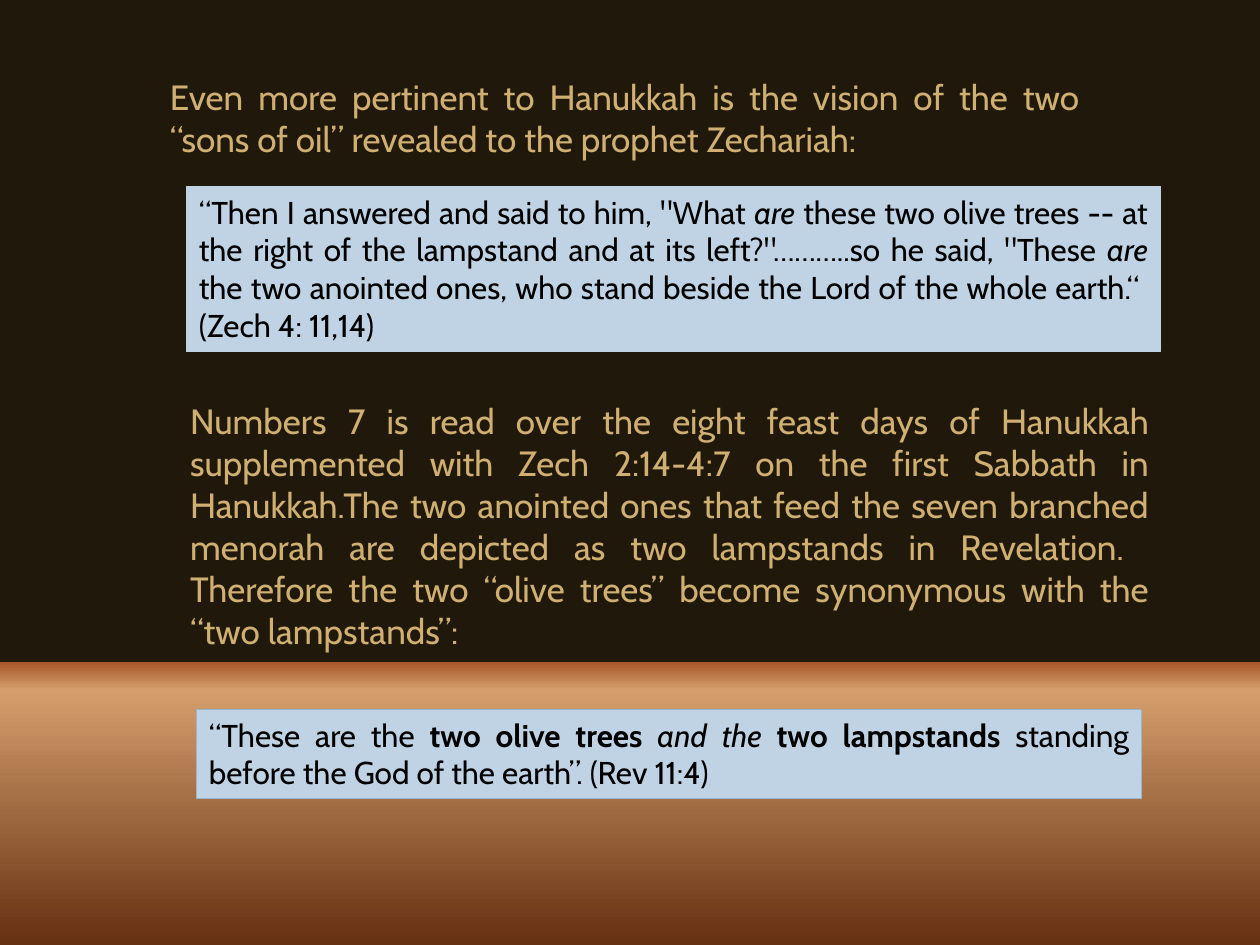
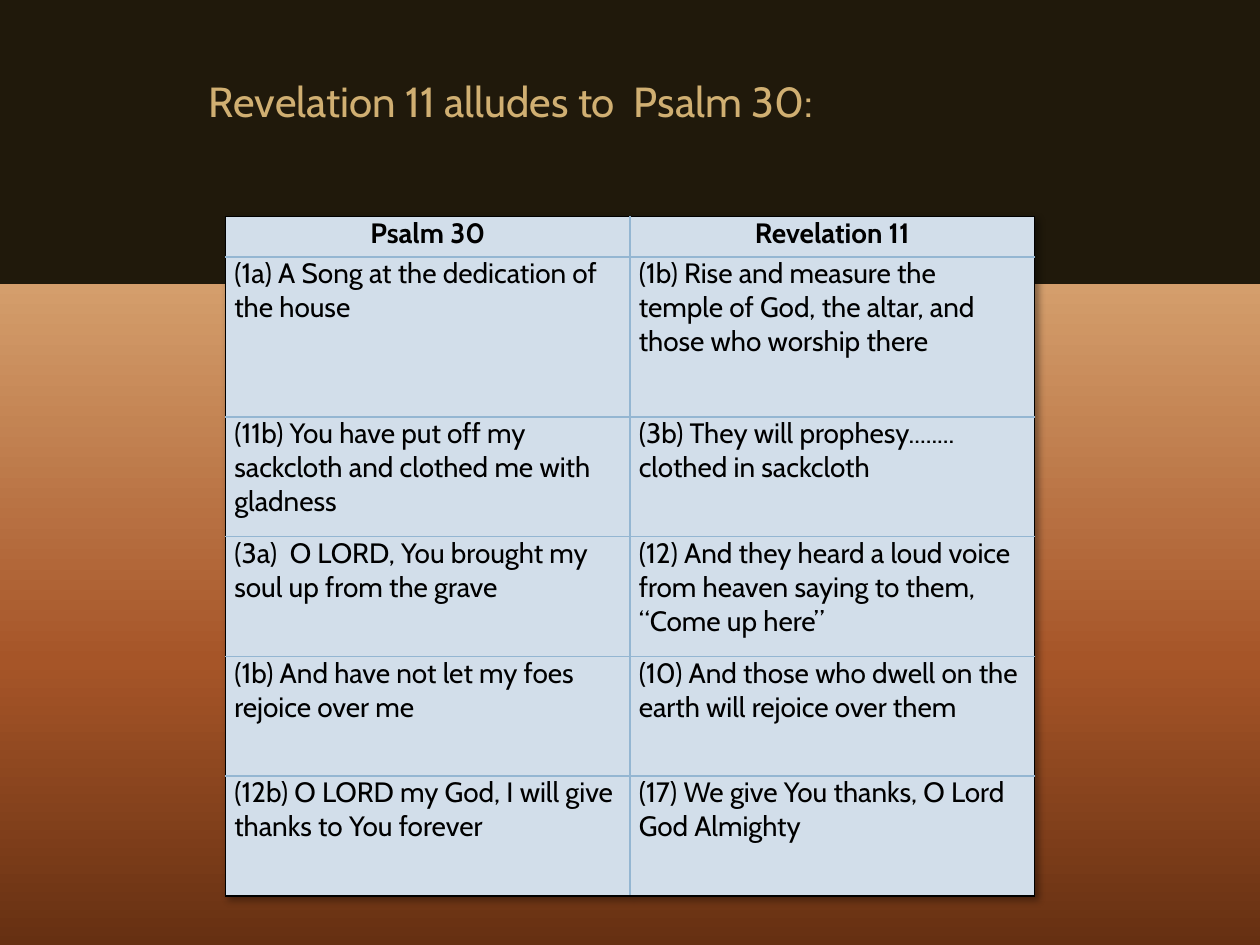
from pptx import Presentation
from pptx.dml.color import RGBColor as Rgb
from pptx.enum.shapes import MSO_SHAPE as Shape
from pptx.enum.text import MSO_AUTO_SIZE as Fit, MSO_ANCHOR as Anchor, PP_ALIGN as Align
from pptx.oxml.ns import qn
from pptx.util import Inches, Pt
from lxml.etree import SubElement as Sub, Element as Elem

FONT = "Cabin"
COL = {
    "dark": "20190B", "rust": "A65528", "sand": "D49E6C", "brown": "663012",
    "gold": "D0AF72", "box": "BFD3E4", "cell": "D2DEEA", "edge": "94B6D2",
    "ink": "000000",
}


def color(name):
    return Rgb.from_string(COL[name])


# Slide with a vertical gradient; stops are (percent, colour) pairs
def page(deck, stops):
    slide = deck.slides.add_slide(deck.slide_layouts[6])
    fill = slide.background.fill
    fill.gradient()
    fill.gradient_angle = 270
    group = slide.element.find(".//" + qn("a:gsLst"))
    for old in list(group):
        group.remove(old)
    for pos, name in stops:
        stop = Sub(group, qn("a:gs"), pos=str(pos * 1000))
        Sub(stop, qn("a:srgbClr"), val=COL[name])
    return slide


# Text is a string or a list of (string, style), style being "", "b" or "i"
def write(frame, text, size=18, tint="ink", align=Align.LEFT, style=""):
    para = frame.paragraphs[0]
    para.alignment = align
    runs = [(text, style)] if isinstance(text, str) else text
    for words, look in runs:
        run = para.add_run()
        run.text = words
        font = run.font
        font.name, font.size = FONT, Pt(size)
        font.bold, font.italic = look == "b", look == "i"
        font.color.rgb = color(tint)


def grow(frame):
    frame.word_wrap = True
    frame.auto_size = Fit.SHAPE_TO_FIT_TEXT
    frame.vertical_anchor = Anchor.TOP


def label(slide, area, text, **form):
    box = slide.shapes.add_textbox(*map(Inches, area))
    grow(box.text_frame)
    write(box.text_frame, text, tint="gold", **form)


def quote(slide, area, text, edge):
    box = slide.shapes.add_shape(Shape.RECTANGLE, *map(Inches, area))
    box.shadow.inherit = False
    box.fill.solid()
    box.fill.fore_color.rgb = color("box")
    box.line.color.rgb = color(edge)
    box.line.width = Pt(0.75)
    grow(box.text_frame)
    write(box.text_frame, text, align=Align.JUSTIFY)


# Black lines on the outside of the table, blue ones inside
def border(cell, outer):
    props = cell._tc.get_or_add_tcPr()
    for side in "LRTB":
        name, width = ("ink", 1) if side in outer else ("edge", 0.79)
        line = Sub(props, qn("a:ln" + side), w=str(Pt(width)))
        Sub(Sub(line, qn("a:solidFill")), qn("a:srgbClr"), val=COL[name])


def shade(table):
    effect = Elem(qn("a:effectLst"))
    drop = Sub(effect, qn("a:outerShdw"), blurRad=str(Pt(4)), dist=str(Pt(3)),
               dir="2700000", algn="tl", rotWithShape="0")
    tone = Sub(drop, qn("a:srgbClr"), val=COL["ink"])
    Sub(tone, qn("a:alpha"), val="40000")
    table._tbl.tblPr.insert(0, effect)


def grid(slide, left, top, wide, highs, rows):
    last, end = len(rows) - 1, len(rows[0]) - 1
    area = (left, top, wide * (end + 1), sum(highs))
    table = slide.shapes.add_table(last + 1, end + 1, *map(Inches, area)).table
    table.first_row = table.horz_banding = False
    shade(table)
    for col in table.columns:
        col.width = Inches(wide)
    for r, (high, row) in enumerate(zip(highs, rows)):
        table.rows[r].height = Inches(high)
        for c, text in enumerate(row):
            cell = table.cell(r, c)
            cell.margin_left = cell.margin_right = Inches(0.07)
            cell.margin_top = cell.margin_bottom = 0
            sides = {"L": c == 0, "R": c == end, "T": r == 0, "B": r == last}
            border(cell, [side for side, out in sides.items() if out])
            cell.fill.solid()
            cell.fill.fore_color.rgb = color("cell")
            head = {"align": Align.CENTER, "style": "b"} if r == 0 else {}
            write(cell.text_frame, text, size=16, **head)


def vision(deck):
    slide = page(deck, [(70, "dark"), (70, "rust"), (73, "sand"), (100, "brown")])
    body = {"size": 20, "align": Align.JUSTIFY}
    label(slide, (1.25, 0.55, 7.42, 1.08),
          "Even more pertinent to Hanukkah is the vision of the two “sons of oil” "
          "revealed to the prophet Zechariah:", **body)
    quote(slide, (1.48, 1.48, 7.73, 1.31), [
        ("“Then I answered and said to him, \"What ", ""),
        ("are ", "i"),
        ("these two olive trees -- at the right of the lampstand and at its "
         "left?\"………..so he said, \"These ", ""),
        ("are ", "i"),
        ("the two anointed ones, who stand beside the Lord of the whole "
         "earth.“  (Zech 4: 11,14)", ""),
    ], "box")
    label(slide, (1.41, 3.12, 7.81, 2.12),
          "Numbers 7 is read over the eight feast days of Hanukkah supplemented "
          "with Zech 2:14-4:7 on the first Sabbath in Hanukkah.The two anointed "
          "ones that feed the seven branched menorah are depicted as two "
          "lampstands in Revelation.  Therefore the two “olive trees” become "
          "synonymous with the “two lampstands”:", **body)
    quote(slide, (1.56, 5.63, 7.5, 0.71), [
        ("“These are the ", ""),
        ("two olive trees ", "b"),
        ("and the ", "i"),
        ("two lampstands ", "b"),
        ("standing before the God of the earth”. (Rev 11:4)", ""),
    ], "edge")


def psalm(deck):
    slide = page(deck, [(30, "dark"), (30, "sand"), (70, "rust"), (100, "brown")])
    label(slide, (1.56, 0.55, 6.8, 0.5), "Revelation 11 alludes to  Psalm 30:",
          size=24)
    grid(slide, 1.79, 1.72, 3.21, [0.32, 1.27] + [0.95] * 4, [
        ("Psalm 30", "Revelation 11"),
        ("(1a) A Song at the dedication of the house",
         "(1b) Rise and measure the temple of God, the altar, and those who "
         "worship there"),
        ("(11b) You have put off my sackcloth and clothed me with gladness",
         "(3b) They will prophesy........ clothed in sackcloth"),
        ("(3a)  O LORD, You brought my soul up from the grave",
         "(12) And they heard a loud voice from heaven saying to them, "
         "“Come up here”"),
        ("(1b) And have not let my foes rejoice over me",
         "(10) And those who dwell on the earth will rejoice over them"),
        ("(12b) O LORD my God, I will give thanks to You forever",
         "(17) We give You thanks, O Lord God Almighty"),
    ])


def main():
    deck = Presentation()
    deck.slide_width, deck.slide_height = Inches(10), Inches(7.5)
    vision(deck)
    psalm(deck)
    deck.save("out.pptx")


if __name__ == "__main__":
    main()
